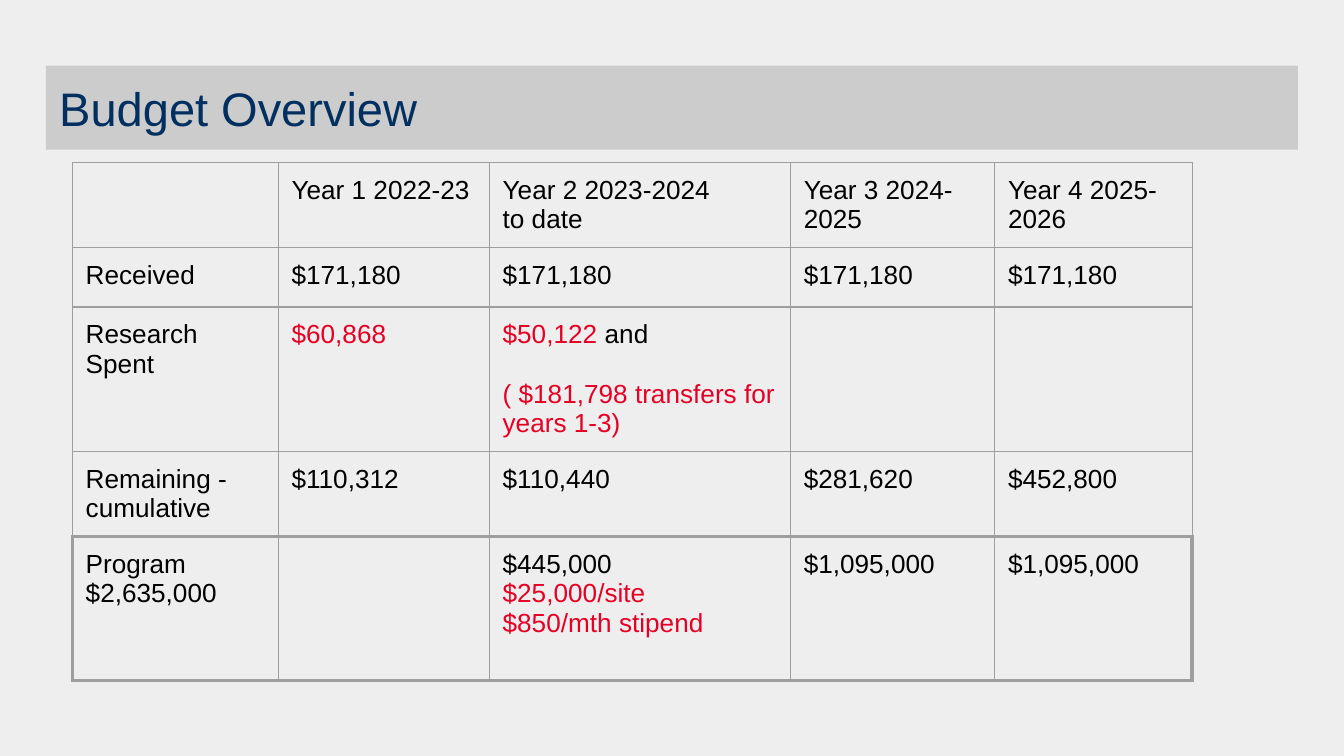
from lxml import etree
from pptx import Presentation
from pptx.dml.color import RGBColor
from pptx.enum.shapes import MSO_SHAPE
from pptx.enum.text import MSO_ANCHOR, PP_ALIGN
from pptx.oxml.ns import qn
from pptx.util import Cm, Pt

RECTANGLE = MSO_SHAPE.RECTANGLE
MIDDLE = MSO_ANCHOR.MIDDLE
LEFT = PP_ALIGN.LEFT

COLORS = {
    "background": "EEEEEE",
    "title_bar": "CCCCCC",
    "title": "002F60",
    "text": "000000",
    "spent": "E50024",
    "border": "9E9E9E",
}
INSET = Cm(0.25)
THIN, THICK = Pt(0.75), Pt(2.25)


def write(text_frame, lines, size=14, color="text", gap=0):
    """Write one paragraph per line; a line is a string or a list of (text, color) runs."""
    for index, line in enumerate(lines):
        paragraph = text_frame.paragraphs[0] if index == 0 else text_frame.add_paragraph()
        paragraph.alignment = LEFT
        paragraph.space_before = Pt(gap if index else 0)
        runs = [(line, color)] if isinstance(line, str) else line
        for text, run_color in runs:
            run = paragraph.add_run()
            run.text = text
            run.font.name = "Arial"
            run.font.size = Pt(size)
            run.font.color.rgb = RGBColor.from_string(COLORS[run_color])


def set_borders(cell, widths):
    """Set the left, right, top and bottom border widths, in that order."""
    properties = cell._tc.get_or_add_tcPr()
    for index, (side, width) in enumerate(zip("LRTB", widths)):
        line = etree.Element(qn(f"a:ln{side}"), w=str(width))
        fill = etree.SubElement(line, qn("a:solidFill"))
        etree.SubElement(fill, qn("a:srgbClr"), val=COLORS["border"])
        properties.insert(index, line)


presentation = Presentation()
presentation.slide_width = Cm(25.4)
presentation.slide_height = Cm(14.29)
slide = presentation.slides.add_slide(presentation.slide_layouts[6])
slide.background.fill.solid()
slide.background.fill.fore_color.rgb = RGBColor.from_string(COLORS["background"])

# Title bar
title = slide.shapes.add_shape(RECTANGLE, Cm(0.87), Cm(1.24), Cm(23.66), Cm(1.59))
title.shadow.inherit = False
title.fill.solid()
title.fill.fore_color.rgb = RGBColor.from_string(COLORS["title_bar"])
title.line.fill.background()
title_frame = title.text_frame
title_frame.word_wrap = True
title_frame.vertical_anchor = MIDDLE
title_frame.margin_left = title_frame.margin_right = INSET
title_frame.margin_top = title_frame.margin_bottom = INSET
write(title_frame, ["Budget Overview"], size=25.2, color="title")

# Budget table: each cell is a list of lines
column_widths = [3.89, 3.99, 5.69, 3.86, 3.73]
row_heights = [1.6, 1.12, 2.72, 1.6, 2.72]
budget = [
    [[], ["Year 1 2022-23"], ["Year 2 2023-2024", "to date"],
     ["Year 3 2024-2025"], ["Year 4 2025-2026"]],
    [["Received"]] + [["$171,180"]] * 4,
    [["Research Spent"], [[("$60,868", "spent")]],
     [[("$50,122 ", "spent"), ("and", "text")],
      [("( $181,798 transfers for years 1-3)", "spent")]], [], []],
    [["Remaining - cumulative"], ["$110,312"], ["$110,440"], ["$281,620"], ["$452,800"]],
    [["Program", "$2,635,000"], [],
     ["$445,000", [("$25,000/site", "spent")], [("$850/mth stipend", "spent")]],
     ["$1,095,000"], ["$1,095,000"]],
]
spent_row = 2
program_row = len(budget) - 1
last_column = len(column_widths) - 1

table = slide.shapes.add_table(
    len(row_heights), len(column_widths), Cm(1.37), Cm(3.07),
    Cm(sum(column_widths)), Cm(sum(row_heights))).table
table.first_row = False
table.horz_banding = False
for column, width in zip(table.columns, column_widths):
    column.width = Cm(width)
for row, height in zip(table.rows, row_heights):
    row.height = Cm(height)

for row_index, row_cells in enumerate(budget):
    for column_index, lines in enumerate(row_cells):
        cell = table.cell(row_index, column_index)
        cell.fill.background()
        cell.margin_left = cell.margin_right = INSET
        cell.margin_top = cell.margin_bottom = INSET
        write(cell.text_frame, lines, gap=16 if row_index == spent_row else 0)
        # A thick frame surrounds the program row
        in_program = row_index == program_row
        set_borders(cell, [
            THICK if in_program and column_index == 0 else THIN,
            THICK if in_program and column_index == last_column else THIN,
            THICK if in_program else THIN,
            THICK if row_index >= program_row - 1 else THIN,
        ])

presentation.save("out.pptx")
